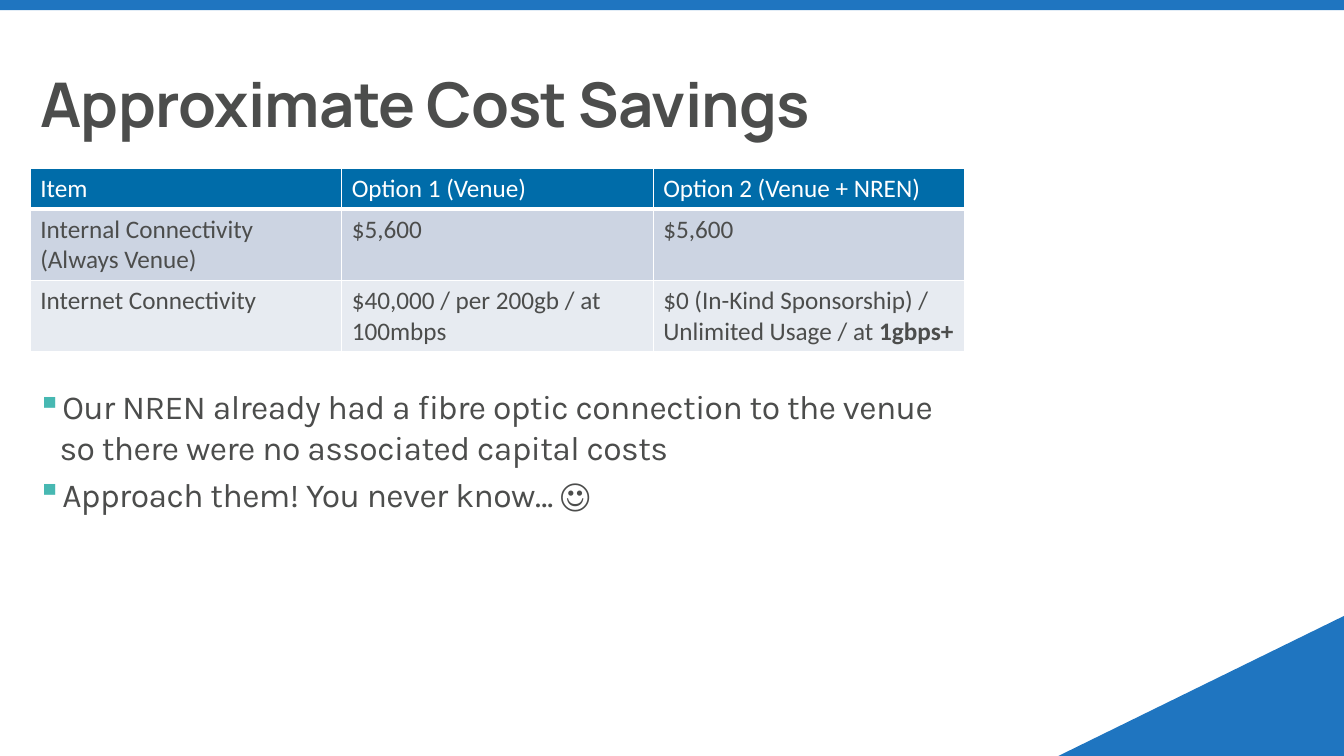
from dataclasses import dataclass

from lxml.etree import SubElement
from pptx import Presentation
from pptx.dml.color import RGBColor
from pptx.enum.shapes import MSO_SHAPE
from pptx.enum.text import MSO_ANCHOR
from pptx.oxml.ns import qn
from pptx.util import Pt


@dataclass(frozen=True)
class Theme:
    accent: str = "1F75C0"
    ink: str = "4C4D4C"
    white: str = "FFFFFF"
    bullet: str = "47B8B2"
    row_fills: tuple = ("006CA9", "CCD4E2", "E7EBF1")
    title_size: int = 44
    table_size: int = 18
    body_size: int = 24


theme = Theme()


def style_run(run, font_name, size, color, bold=False, tracking=0):
    run.font.name = font_name
    run.font.size = Pt(size)
    run.font.bold = bold
    run.font.color.rgb = RGBColor.from_string(color)
    if tracking:
        run._r.get_or_add_rPr().set("spc", str(tracking))


def add_border(cell, side, width):
    line = SubElement(cell._tc.get_or_add_tcPr(), qn(f"a:{side}"), w=str(Pt(width)))
    fill = SubElement(line, qn("a:solidFill"))
    SubElement(fill, qn("a:srgbClr"), val=theme.white)


deck = Presentation()
deck.slide_width, deck.slide_height = Pt(960), Pt(540)
slide = deck.slides.add_slide(deck.slide_layouts[6])

corner = slide.shapes.add_shape(
    MSO_SHAPE.RIGHT_TRIANGLE, Pt(756), Pt(440), Pt(204), Pt(100))
corner._element.spPr.get_or_add_xfrm().set("flipH", "1")
top_band = slide.shapes.add_shape(MSO_SHAPE.RECTANGLE, 0, 0, Pt(960), Pt(7.2))
for decoration in (corner, top_band):
    decoration.shadow.inherit = False
    decoration.fill.solid()
    decoration.fill.fore_color.rgb = RGBColor.from_string(theme.accent)
    decoration.line.fill.background()

title = slide.shapes.add_textbox(Pt(21.6), Pt(7.2), Pt(890), Pt(97.2)).text_frame
title.word_wrap = True
title.vertical_anchor = MSO_ANCHOR.BOTTOM
title.text = "Approximate Cost Savings"
title.paragraphs[0].line_spacing = 0.9
style_run(title.paragraphs[0].runs[0], "Manrope", theme.title_size, theme.ink, True, -50)

cost_rows = [
    ("Item", "Option 1 (Venue)", "Option 2 (Venue + NREN)"),
    ("Internal Connectivity\n(Always Venue)", "$5,600", "$5,600"),
    ("Internet Connectivity", "$40,000 / per 200gb / at 100mbps",
     "$0 (In-Kind Sponsorship) / Unlimited Usage / at "),
]
row_heights = (29.2, 50.8, 50.8)
costs = slide.shapes.add_table(
    3, 3, Pt(21.6), Pt(120.2), Pt(667.5), Pt(sum(row_heights))).table
costs.horz_banding = False
for column in costs.columns:
    column.width = Pt(222.5)

for row_index, entries in enumerate(cost_rows):
    costs.rows[row_index].height = Pt(row_heights[row_index])
    for column_index, entry in enumerate(entries):
        cell = costs.cell(row_index, column_index)
        cell.text_frame.text = entry
        for paragraph in cell.text_frame.paragraphs:
            style_run(paragraph.runs[0], "Calibri", theme.table_size,
                      theme.ink if row_index else theme.white)
        for side in ("lnL", "lnR", "lnT", "lnB"):
            header_edge = (row_index, side) in ((0, "lnB"), (1, "lnT"))
            add_border(cell, side, 3 if header_edge else 1)
        cell.fill.solid()
        cell.fill.fore_color.rgb = RGBColor.from_string(theme.row_fills[row_index])

speed = costs.cell(2, 2).text_frame.paragraphs[0].add_run()
speed.text = "1gbps+"
style_run(speed, "Calibri", theme.table_size, theme.ink, True)

remarks = slide.shapes.add_textbox(Pt(21.6), Pt(272.9), Pt(667.5), Pt(110.9)).text_frame
remarks.word_wrap = True
remarks.margin_left = remarks.margin_right = Pt(5)
remarks.margin_top = remarks.margin_bottom = Pt(3)
remarks.text = (
    "Our NREN already had a fibre optic connection to the venue "
    "so there were no associated capital costs\n"
    "Approach them! You never know… ☺"
)
for index, remark in enumerate(remarks.paragraphs):
    properties = remark._p.get_or_add_pPr()
    properties.set("marL", str(Pt(16)))
    properties.set("indent", str(-Pt(16)))
    bullet_color = SubElement(properties, qn("a:buClr"))
    SubElement(bullet_color, qn("a:srgbClr"), val=theme.bullet)
    SubElement(properties, qn("a:buChar"), char="▪")
    if index:
        remark.space_before = Pt(4.8)
    style_run(remark.runs[0], "Karla", theme.body_size, theme.ink, tracking=-40)

deck.save("out.pptx")
